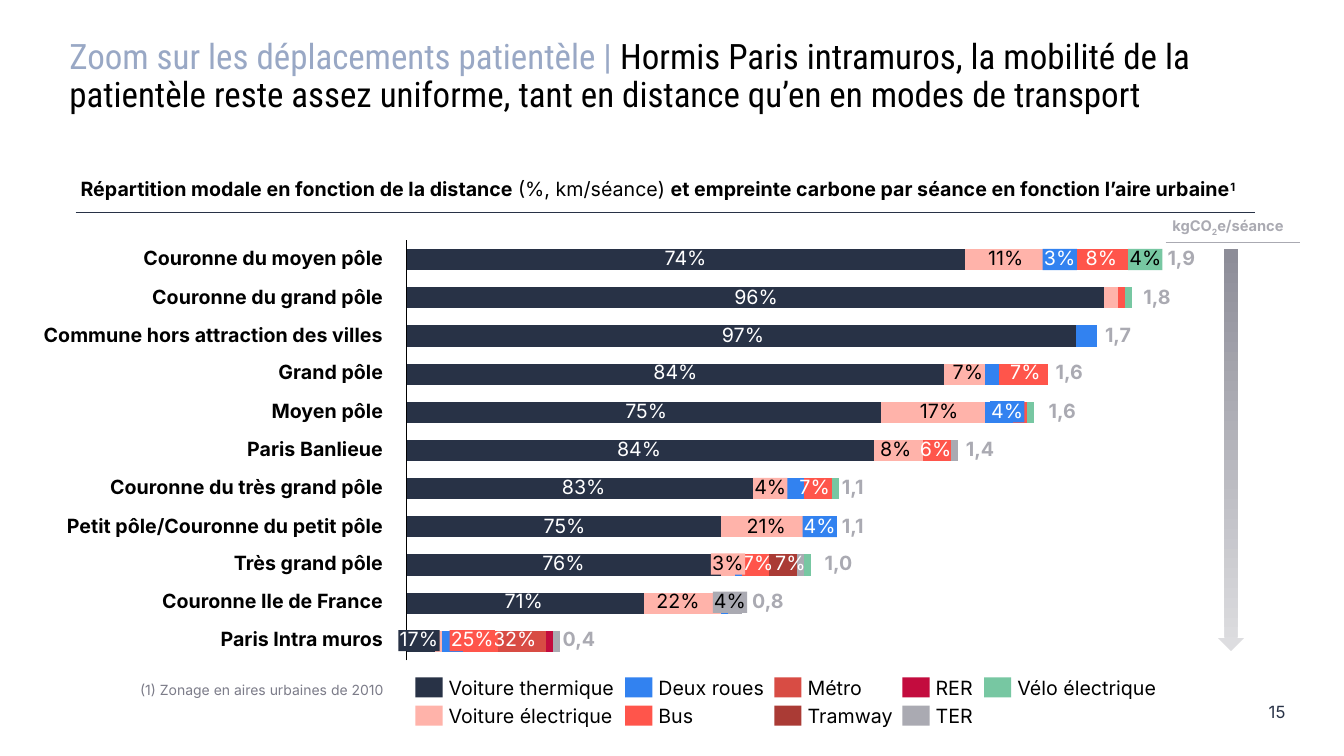
from lxml.etree import SubElement
from pptx import Presentation
from pptx.chart.data import CategoryChartData
from pptx.dml.color import RGBColor
from pptx.enum.chart import XL_CHART_TYPE, XL_TICK_LABEL_POSITION, XL_TICK_MARK
from pptx.enum.shapes import MSO_CONNECTOR, MSO_SHAPE
from pptx.enum.text import MSO_ANCHOR, PP_ALIGN
from pptx.oxml.ns import qn
from pptx.util import Pt

COLORS = {
    "black": "000000", "white": "FFFFFF", "navy": "283246", "pink": "FFB3AA",
    "blue": "3282F0", "coral": "FF554B", "brick": "D84C44", "brown": "AA3B35",
    "crimson": "C30C3E", "grey": "AAAAB2", "green": "77C7A2", "title": "99A8C5",
    "note": "7C7C89", "arrow_light": "DDDDE0", "arrow_dark": "8D8D98",
}
DARK_TEXT = {"pink", "grey", "green"}

MODES = [
    ("Voiture thermique", "navy", 170, [80, 100, 96, 77, 68, 67, 51, 45, 45, 34, 4]),
    ("Voiture électrique", "pink", 168, [12, 2, 0, 6, 15, 7, 3, 13, 2, 11, 1]),
    ("Deux roues", "blue", 110, [4, 0, 3, 2, 4, 0, 3, 3, 1, 1, 3]),
    ("Bus", "coral", 40, [9, 1, 0, 7, 2, 4, 4, 0, 4, 0, 5]),
    ("Métro", "brick", 60, [0, 0, 0, 0, 0, 0, 0, 0, 0, 0, 7]),
    ("Tramway", "brown", 90, [0, 0, 0, 0, 0, 0, 0, 0, 4, 0, 0]),
    ("RER", "crimson", 43, [0, 0, 0, 0, 0, 0, 0, 0, 0, 0, 1]),
    ("TER", "grey", 43, [0, 0, 0, 0, 0, 1, 0, 0, 1, 2, 1]),
    ("Vélo électrique", "green", 143, [4, 1, 0, 0, 1, 0, 1, 0, 1, 0, 0]),
]
LEGEND_COLUMNS = [412, 620, 768, 895, 976]

# Area: name, name left, footprint (text, left, width), shares (text, left, width, mode colour, boxed)
AREAS = [
    ("Couronne du moyen pôle", 136, ("1,9", 1155, 37),
     [("8%", 1076, 33, "coral", False), ("4%", 1119, 34, "green", True),
      ("3%", 1034, 34, "blue", True), ("11%", 978, 39, "pink", False),
      ("74%", 658, 44, "navy", False)]),
    ("Couronne du grand pôle", 145, ("1,8", 1131, 37), [("96%", 727, 46, "navy", False)]),
    ("Commune hors attraction des villes", 36, ("1,7", 1093, 35),
     [("97%", 715, 44, "navy", False)]),
    ("Grand pôle", 270, ("1,6", 1044, 37),
     [("7%", 1001, 32, "coral", False), ("7%", 944, 32, "pink", False),
      ("84%", 647, 46, "navy", False)]),
    ("Moyen pôle", 264, ("1,6", 1037, 37),
     [("4%", 982, 34, "blue", True), ("17%", 911, 41, "pink", False),
      ("75%", 619, 44, "navy", False)]),
    ("Paris Banlieue", 239, ("1,4", 955, 38),
     [("6%", 911, 34, "coral", False), ("8%", 872, 33, "pink", False),
      ("84%", 611, 46, "navy", False)]),
    ("Couronne du très grand pôle", 103, ("1,1", 832, 32),
     [("7%", 792, 32, "coral", False), ("4%", 747, 34, "pink", True),
      ("83%", 556, 46, "navy", False)]),
    ("Petit pôle/Couronne du petit pôle", 59, ("1,1", 832, 32),
     [("4%", 796, 34, "blue", True), ("21%", 739, 42, "pink", False),
      ("75%", 538, 44, "navy", False)]),
    ("Très grand pôle", 226, ("1,0", 815, 37),
     [("7%", 768, 32, "brown", False), ("7%", 736, 32, "coral", False),
      ("3%", 705, 34, "pink", True), ("76%", 537, 44, "navy", False)]),
    ("Couronne Ile de France", 155, ("0,8", 743, 41),
     [("4%", 707, 34, "grey", True), ("22%", 650, 45, "pink", False),
      ("71%", 499, 41, "navy", False)]),
    ("Paris Intra muros", 213, ("0,4", 555, 42),
     [("32%", 488, 45, "brick", False), ("25%", 446, 45, "coral", True),
      ("17%", 395, 41, "navy", True)]),
]


class SlideBuilder:
    """Draws styled elements on one slide, with lengths in hundredths of an inch."""

    SCALE = 9144
    FONT = "Inter"

    def __init__(self, deck):
        deck.slide_width, deck.slide_height = self.emu(1333, 750)
        self.page = deck.slides.add_slide(deck.slide_layouts[6])

    def emu(self, *lengths):
        return [length * self.SCALE for length in lengths]

    def color(self, name):
        return RGBColor.from_string(COLORS[name])

    def text(self, place, spans, size=14, color="black", bold=False, align=PP_ALIGN.LEFT,
             font=FONT, spacing=None, inset=(0, 0), wrap=False, anchor=MSO_ANCHOR.MIDDLE,
             fill=None):
        box = self.page.shapes.add_textbox(*self.emu(*place))
        if fill:
            box.fill.solid()
            box.fill.fore_color.rgb = self.color(fill)
        frame = box.text_frame
        frame.word_wrap = wrap
        frame.vertical_anchor = anchor
        frame.margin_left, frame.margin_top = self.emu(*inset)
        frame.margin_right, frame.margin_bottom = self.emu(*inset)
        para = frame.paragraphs[0]
        para.alignment = align
        para.line_spacing = spacing
        if isinstance(spans, str):
            spans = [(spans, {})]
        for words, changes in spans:
            span = para.add_run()
            span.text = words
            span.font.name = font
            span.font.size = Pt(size)
            span.font.bold = changes.get("bold", bold)
            span.font.color.rgb = self.color(changes.get("color", color))
            if "baseline" in changes:
                span._r.get_or_add_rPr().set("baseline", str(changes["baseline"] * 1000))

    def shape(self, kind, place, fill=None, gradient=None):
        shape = self.page.shapes.add_shape(kind, *self.emu(*place))
        shape.shadow.inherit = False
        shape.line.fill.background()
        if gradient:
            shape.fill.gradient()
            shape.fill.gradient_angle = 90
            for stop, (position, name) in zip(shape.fill.gradient_stops, gradient):
                stop.position = position
                stop.color.rgb = self.color(name)
        else:
            shape.fill.solid()
            shape.fill.fore_color.rgb = self.color(fill)

    def rule(self, left, right, top, color):
        line = self.page.shapes.add_connector(
            MSO_CONNECTOR.STRAIGHT, *self.emu(left, top, right, top))
        line.line.color.rgb = self.color(color)
        line.line.width = Pt(0.5)
        SubElement(line._element.spPr, qn("a:effectLst"))

    def stacked_bars(self, place, categories, modes, maximum):
        data = CategoryChartData()
        data.categories = categories
        for name, _, _, values in modes:
            data.add_series(name, values)
        chart = self.page.shapes.add_chart(
            XL_CHART_TYPE.BAR_STACKED, *self.emu(*place), data).chart
        chart.has_legend = chart.has_title = False
        chart.font.name = self.FONT
        chart.font.size = Pt(10)
        chart.font.color.rgb = self.color("black")
        plot = chart.plots[0]
        plot.gap_width, plot.overlap, plot.vary_by_categories = 80, 100, False
        for series, (_, color, _, _) in zip(plot.series, modes):
            series.format.fill.solid()
            series.format.fill.fore_color.rgb = self.color(color)
        areas, distances = chart.category_axis, chart.value_axis
        areas.reverse_order = True
        areas.tick_label_position = XL_TICK_LABEL_POSITION.NONE
        areas.major_tick_mark = areas.minor_tick_mark = XL_TICK_MARK.NONE
        areas.format.line.color.rgb = self.color("black")
        areas.format.line.width = Pt(0.75)
        distances.minimum_scale, distances.maximum_scale = 0, maximum
        distances.has_major_gridlines = distances.visible = False
        plot_area = chart._chartSpace.chart.plotArea
        for old in plot_area.findall(qn("c:layout")):
            plot_area.remove(old)
        layout = SubElement(plot_area, qn("c:layout"))
        plot_area.insert(0, layout)
        manual = SubElement(layout, qn("c:manualLayout"))
        for tag, value in (("layoutTarget", "inner"), ("xMode", "edge"), ("yMode", "edge"),
                           ("x", 0.01), ("y", 0.02), ("w", 0.98), ("h", 0.96)):
            SubElement(manual, qn(f"c:{tag}")).set("val", str(value))


def main():
    deck = Presentation()
    slide = SlideBuilder(deck)
    slide.text((59, 34, 1216, 98), [
        ("Zoom sur les déplacements patientèle | ", {"color": "title"}),
        ("Hormis Paris intramuros, la mobilité de la patientèle reste assez uniforme, "
         "tant en distance qu’en en modes de transport", {}),
    ], size=25, font="Roboto Condensed", spacing=0.9, inset=(10, 5), wrap=True,
        anchor=MSO_ANCHOR.TOP)
    slide.text((62, 171, 1181, 34), [
        ("Répartition modale en fonction de la distance ", {}),
        ("(%, km/séance) ", {"bold": False}),
        ("et empreinte carbone par séance en fonction l’aire urbaine", {}),
        ("1", {"baseline": 30}),
    ], bold=True, align=PP_ALIGN.CENTER, inset=(10, 5), wrap=True, anchor=MSO_ANCHOR.TOP)
    slide.rule(75, 1245, 211, "navy")

    slide.stacked_bars((396, 230, 762, 434), [str(n + 1) for n in range(len(AREAS))], MODES, 108)
    for row, (name, name_left, footprint, shares) in enumerate(AREAS):
        top = round(247 + 37.8 * row)
        slide.text((name_left, top, 380 - name_left, 21), name, bold=True,
                   align=PP_ALIGN.RIGHT, spacing=0.9)
        for share, left, width, mode, boxed in shares:
            slide.text((left, top, width, 21), share, align=PP_ALIGN.CENTER, spacing=0.9,
                       color="black" if mode in DARK_TEXT else "white",
                       fill=mode if boxed else None)
        amount, left, width = footprint
        slide.text((left + 3, top, width, 21), amount, color="grey", bold=True, spacing=0.9)

    slide.text((1153, 210, 137, 28), [
        ("kgCO", {}), ("2", {"baseline": -25}), ("e/séance", {}),
    ], size=10.5, color="grey", bold=True, inset=(10, 5), anchor=MSO_ANCHOR.TOP)
    slide.rule(1156, 1289, 240, "grey")
    slide.shape(MSO_SHAPE.DOWN_ARROW, (1208, 247, 26, 399),
                gradient=[(0.01, "arrow_light"), (0.99, "arrow_dark")])

    for index, (name, color, width, _) in enumerate(MODES):
        column, row = divmod(index, 2)
        left, top = LEGEND_COLUMNS[column], 672 + 28 * row
        slide.shape(MSO_SHAPE.RECTANGLE, (left, top, 27, 20), fill=color)
        slide.text((left + 33, top + 1, width, 21), name, spacing=0.9)

    slide.text((139, 676, 929, 44), "(1) Zonage en aires urbaines de 2010", size=10,
               color="note", wrap=True, anchor=MSO_ANCHOR.TOP)
    slide.text((1219, 694, 56, 25), "15", size=12, color="navy", align=PP_ALIGN.RIGHT, wrap=True)
    deck.save("out.pptx")


if __name__ == "__main__":
    main()
